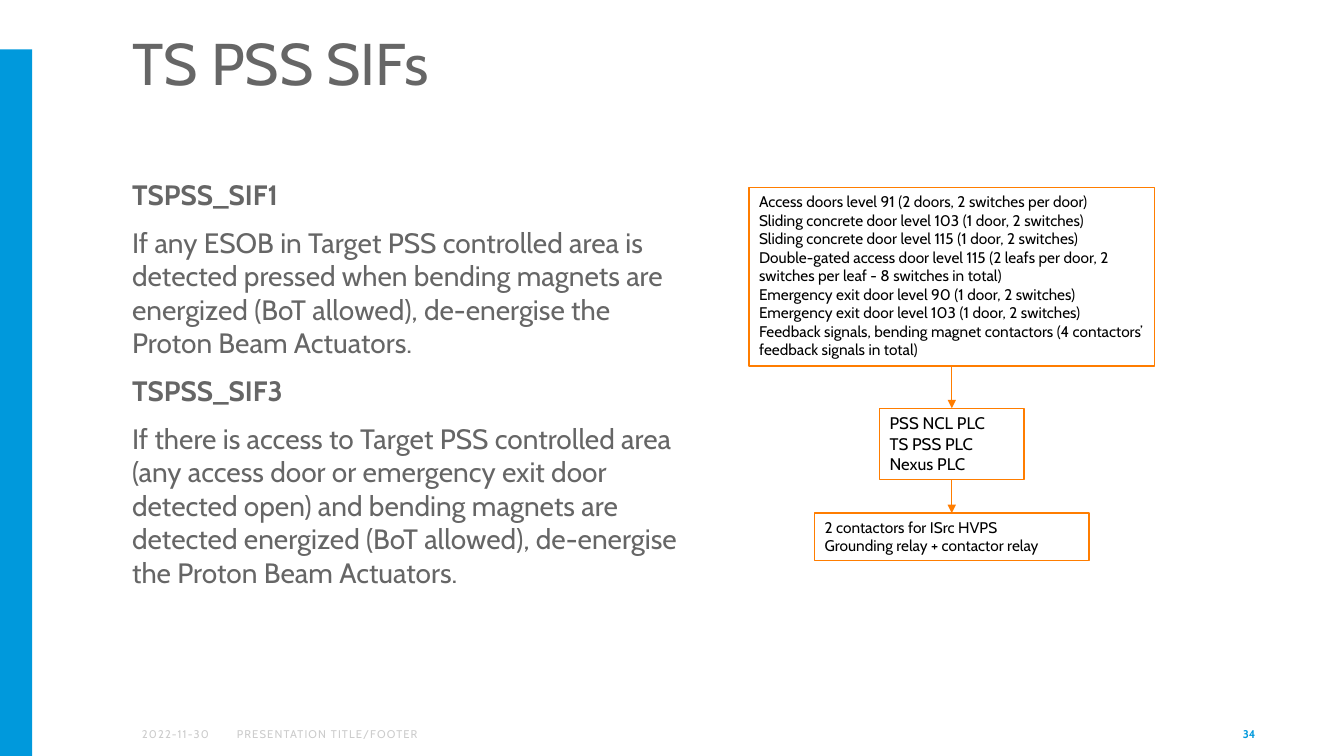
from dataclasses import dataclass

from lxml.etree import SubElement
from pptx import Presentation
from pptx.dml.color import RGBColor
from pptx.enum.shapes import MSO_CONNECTOR, MSO_SHAPE
from pptx.enum.text import MSO_ANCHOR, MSO_AUTO_SIZE, PP_ALIGN
from pptx.oxml.ns import qn
from pptx.util import Inches, Pt


@dataclass(frozen=True)
class Theme:
    font: str = "Cabin"
    blue: RGBColor = RGBColor(0x00, 0x99, 0xDC)
    orange: RGBColor = RGBColor(0xFF, 0x7D, 0x00)
    white: RGBColor = RGBColor(0xFF, 0xFF, 0xFF)
    black: RGBColor = RGBColor(0x00, 0x00, 0x00)
    grey: RGBColor = RGBColor(0x66, 0x66, 0x66)
    pale_grey: RGBColor = RGBColor(0xCC, 0xCC, 0xCC)
    title_size: int = 42
    body_size: int = 20
    controller_size: int = 12
    signal_size: int = 11
    footer_size: int = 8


theme = Theme()


def add_text(paragraph, text, size, color, bold=False):
    run = paragraph.add_run()
    run.text = text
    run.font.name = theme.font
    run.font.size = Pt(size)
    run.font.color.rgb = color
    run.font.bold = bold
    return run


def place(shape, left, top, width, height):
    shape.left, shape.top = Inches(left), Inches(top)
    shape.width, shape.height = Inches(width), Inches(height)


presentation = Presentation()
presentation.slide_width = Inches(13.33)
presentation.slide_height = Inches(7.5)
slide = presentation.slides.add_slide(presentation.slide_layouts[1])

# Side band
band = slide.shapes.add_shape(
    MSO_SHAPE.RECTANGLE, 0, Inches(0.49), Inches(0.32), Inches(7.01))
band.shadow.inherit = False
band.fill.solid()
band.fill.fore_color.rgb = theme.blue
band.line.fill.background()

# Title
title = slide.shapes.title
place(title, 1.21, 0.29, 10.24, 0.72)
frame = title.text_frame
frame.auto_size = MSO_AUTO_SIZE.NONE
frame.vertical_anchor = MSO_ANCHOR.TOP
frame.margin_bottom = Inches(0.02)
paragraph = frame.paragraphs[0]
paragraph.alignment = PP_ALIGN.LEFT
paragraph.line_spacing = 0.9
add_text(paragraph, "TS PSS SIFs", theme.title_size, theme.grey)

# Safety functions: (text, is heading)
safety_functions = [
    ("TSPSS_SIF1", True),
    ("If any ESOB in Target PSS controlled area is detected pressed when "
     "bending magnets are energized (BoT allowed), de-energise the Proton "
     "Beam Actuators.", False),
    ("TSPSS_SIF3", True),
    ("If there is access to Target PSS controlled area (any access door or "
     "emergency exit door detected open) and bending magnets are detected "
     "energized (BoT allowed), de-energise the Proton Beam Actuators.", False),
]
body = slide.placeholders[1]
place(body, 1.2, 1.71, 5.64, 4.81)
frame = body.text_frame
frame.auto_size = MSO_AUTO_SIZE.NONE
frame.margin_left, frame.margin_right = Inches(0.11), Inches(0.02)
for index, (text, is_heading) in enumerate(safety_functions):
    paragraph = frame.add_paragraph() if index else frame.paragraphs[0]
    properties = paragraph._p.get_or_add_pPr()
    properties.set("marL", "0")
    properties.set("indent", "0")
    SubElement(properties, qn("a:buNone"))
    paragraph.space_before = Pt(10 if index else 0)
    add_text(paragraph, text, theme.body_size, theme.grey, is_heading)

# Signal chain from sensors through controllers to actuators
chain_center = 9.44
chain = [
    (1.86, 4.02, 1.77, theme.signal_size, [
        "Access doors level 91 (2 doors, 2 switches per door)",
        "Sliding concrete door level 103 (1 door, 2 switches)",
        "Sliding concrete door level 115 (1 door, 2 switches)",
        "Double-gated access door level 115 (2 leafs per door, 2 switches "
        "per leaf - 8 switches in total)",
        "Emergency exit door level 90 (1 door, 2 switches)",
        "Emergency exit door level 103 (1 door, 2 switches)",
        "Feedback signals, bending magnet contactors (4 contactors’ "
        "feedback signals in total)",
    ]),
    (4.05, 1.43, 0.71, theme.controller_size,
     ["PSS NCL PLC", "TS PSS PLC", "Nexus PLC"]),
    (5.09, 2.72, 0.47, theme.signal_size,
     ["2 contactors for ISrc HVPS", "Grounding relay + contactor relay"]),
]
boxes = []
for top, width, height, size, lines in chain:
    box = slide.shapes.add_shape(
        MSO_SHAPE.RECTANGLE, Inches(chain_center - width / 2), Inches(top),
        Inches(width), Inches(height))
    box.shadow.inherit = False
    box.fill.solid()
    box.fill.fore_color.rgb = theme.white
    box.line.color.rgb = theme.orange
    box.line.width = Pt(1)
    frame = box.text_frame
    frame.word_wrap = True
    frame.auto_size = MSO_AUTO_SIZE.SHAPE_TO_FIT_TEXT
    frame.vertical_anchor = MSO_ANCHOR.TOP
    for index, line in enumerate(lines):
        paragraph = frame.add_paragraph() if index else frame.paragraphs[0]
        paragraph.alignment = PP_ALIGN.LEFT
        add_text(paragraph, line, size, theme.black)
    boxes.append(box)

for upper, lower in zip(boxes, boxes[1:]):
    arrow = slide.shapes.add_connector(MSO_CONNECTOR.STRAIGHT, 0, 0, 0, 0)
    arrow.begin_connect(upper, 2)
    arrow.end_connect(lower, 0)
    arrow.line.color.rgb = theme.orange
    arrow.line.width = Pt(0.5)
    SubElement(arrow.line._get_or_add_ln(), qn("a:tailEnd"), type="triangle")
    SubElement(arrow._element.spPr, qn("a:effectLst"))

# Footer: left, width, text, alignment, colour, bold, letter spacing
footer = [
    (1.31, 0.91, "2022-11-30", PP_ALIGN.LEFT, theme.pale_grey, False, 80),
    (2.25, 4.72, "PRESENTATION TITLE/FOOTER", PP_ALIGN.LEFT,
     theme.pale_grey, False, 80),
    (9.55, 3, "34", PP_ALIGN.RIGHT, theme.blue, True, 0),
]
for left, width, text, alignment, color, bold, spacing in footer:
    text_box = slide.shapes.add_textbox(
        Inches(left), Inches(7.08), Inches(width), Inches(0.4))
    frame = text_box.text_frame
    frame.word_wrap = True
    frame.vertical_anchor = MSO_ANCHOR.MIDDLE
    paragraph = frame.paragraphs[0]
    paragraph.alignment = alignment
    run = add_text(paragraph, text, theme.footer_size, color, bold)
    run.font._element.set("spc", str(spacing))

presentation.save("out.pptx")
